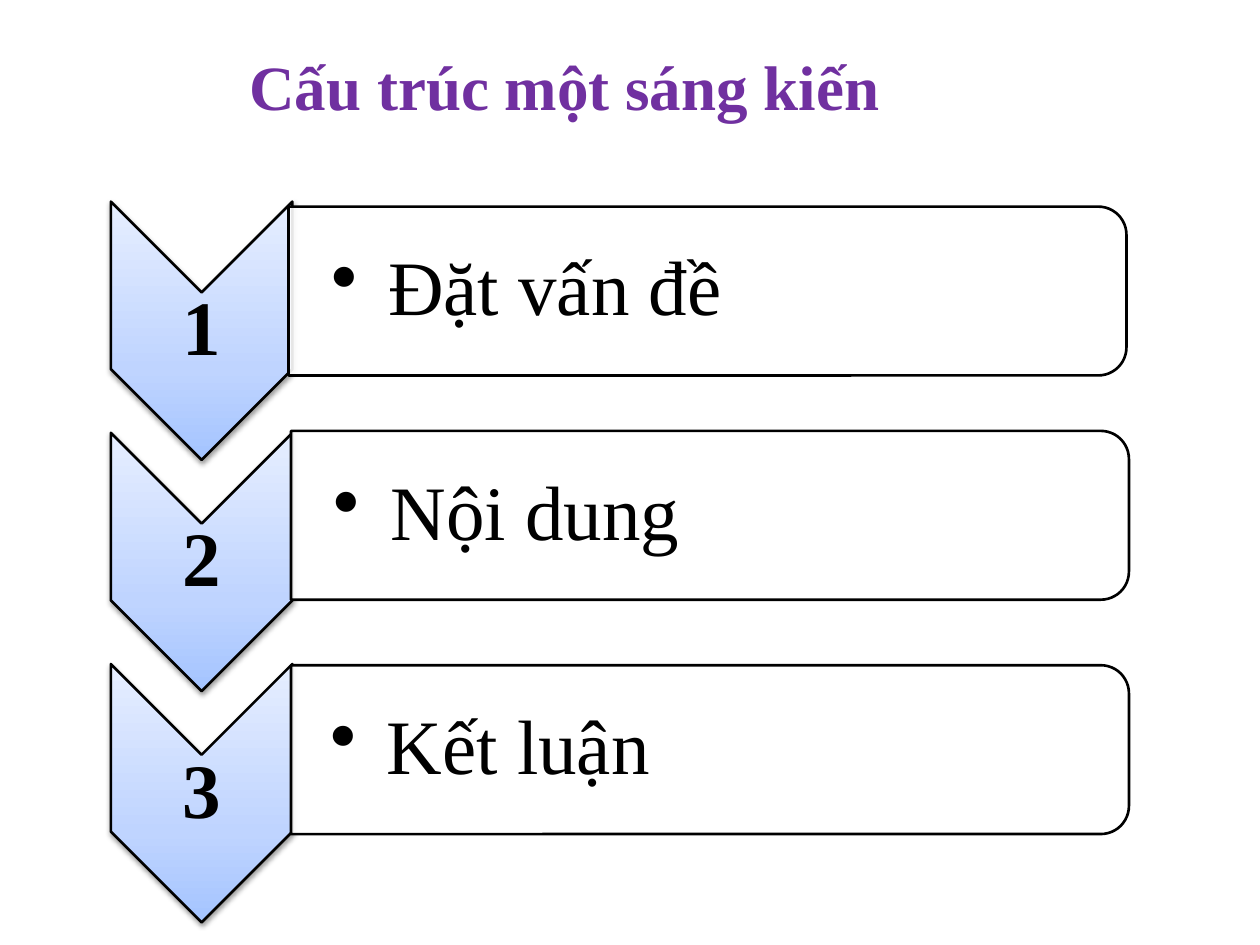
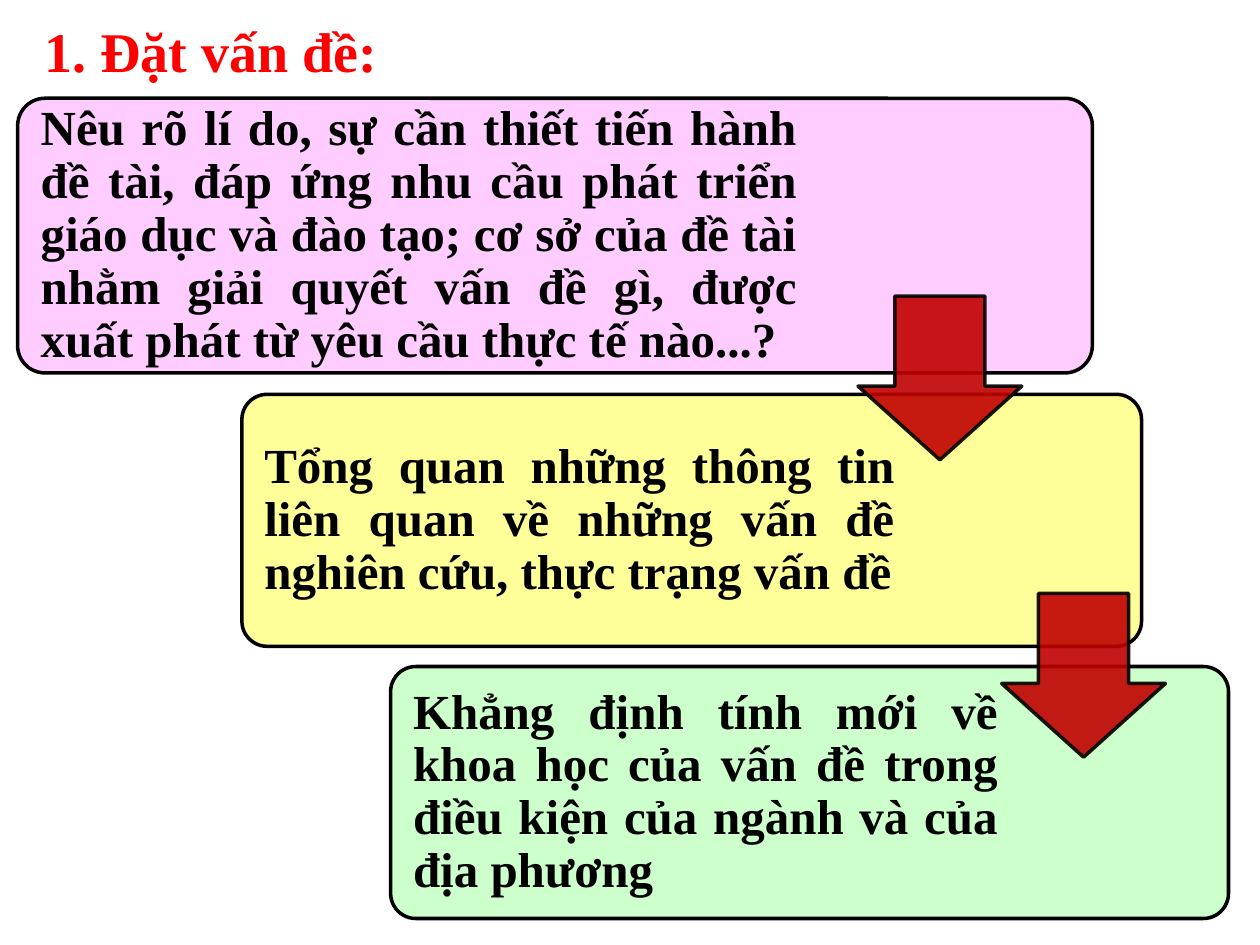
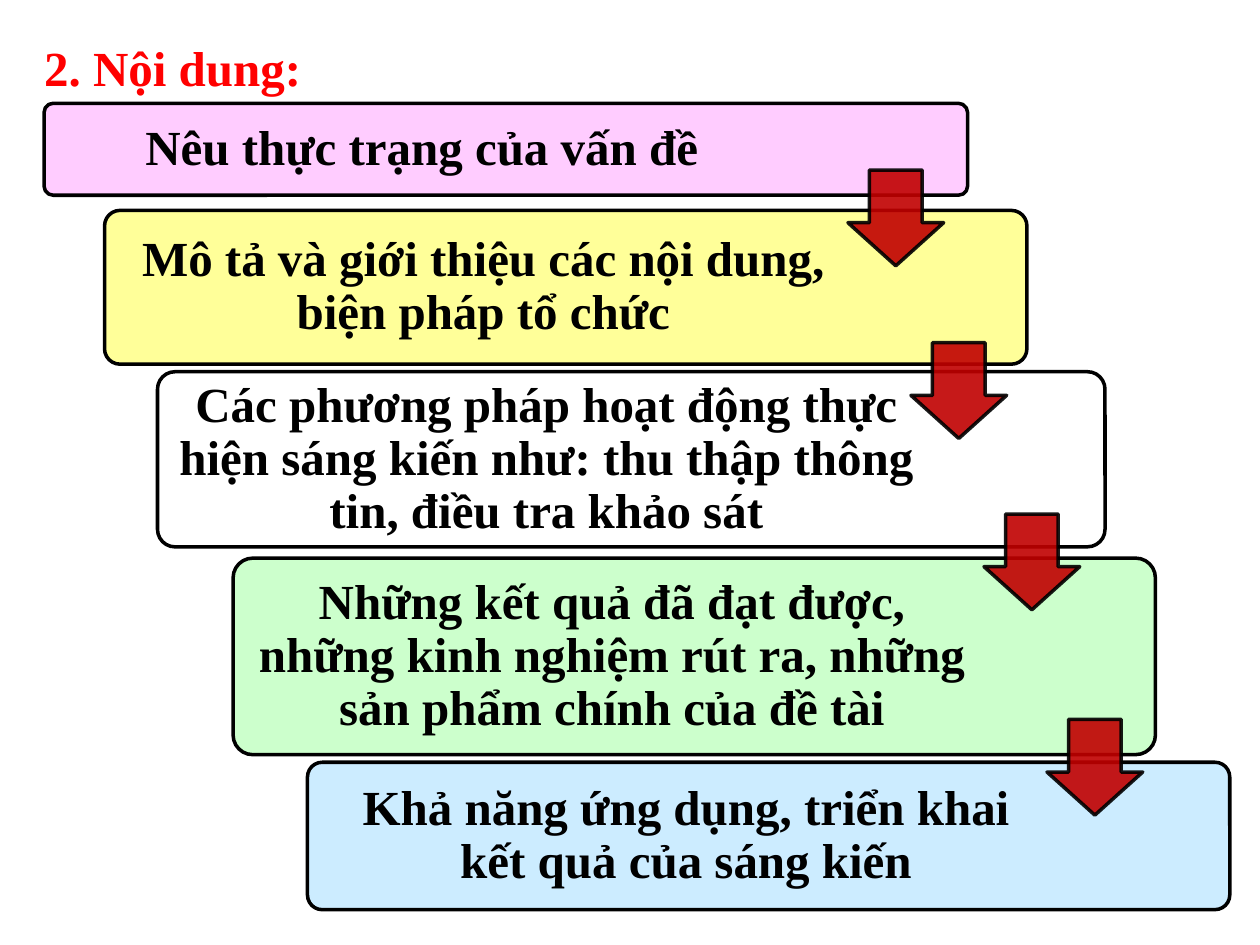
from pptx import Presentation
from pptx.dml.color import RGBColor
from pptx.enum.shapes import MSO_SHAPE
from pptx.enum.text import MSO_ANCHOR, PP_ALIGN
from pptx.oxml import parse_xml
from pptx.oxml.ns import nsdecls, qn
from pptx.oxml.xmlchemy import OxmlElement
from pptx.util import Inches, Pt

BLACK = RGBColor(0x00, 0x00, 0x00)
WHITE = RGBColor(0xFF, 0xFF, 0xFF)
PURPLE = RGBColor(0x70, 0x30, 0xA0)
RED = RGBColor(0xFF, 0x00, 0x00)
DARK_RED = RGBColor(0xC0, 0x00, 0x00)
PINK = RGBColor(0xFF, 0xCC, 0xFF)
YELLOW = RGBColor(0xFF, 0xFF, 0x99)
GREEN = RGBColor(0xCC, 0xFF, 0xCC)
SKY = RGBColor(0xCC, 0xEC, 0xFF)
CHEVRON_STOPS = [
    (0, RGBColor(0xA4, 0xC4, 0xFF)),
    (35, RGBColor(0xBF, 0xD4, 0xFF)),
    (100, RGBColor(0xE6, 0xEE, 0xFF)),
]
FONT = "Times New Roman"
ROUNDING = 0.1
CORNER_INSET = 0.29 * ROUNDING


def write(sp, text, size=28, color=BLACK, bold=True, align=PP_ALIGN.LEFT,
          anchor=MSO_ANCHOR.MIDDLE, spacing=0.9, margins=(0.12,) * 4):
    tf = sp.text_frame
    tf.word_wrap = True
    tf.vertical_anchor = anchor
    tf.margin_left, tf.margin_top, tf.margin_right, tf.margin_bottom = map(Inches, margins)
    p = tf.paragraphs[0]
    p.alignment = align
    p.line_spacing = spacing
    r = p.add_run()
    r.text = text
    r.font.name = FONT
    r.font.size = Pt(size)
    r.font.bold = bold
    r.font.color.rgb = color
    return p


def add_text(s, box, text, **fmt):
    return write(s.shapes.add_textbox(*map(Inches, box)), text, **fmt)


def add_title(s, box, text, indent=0.1, **fmt):
    sp = s.shapes.title
    sp.left, sp.top, sp.width, sp.height = map(Inches, box)
    write(sp, text, anchor=MSO_ANCHOR.TOP, spacing=1.0,
          margins=(indent, 0.05, 0.1, 0.05), **fmt)


def add_shape(s, kind, box, fill, line=2, alpha=100, line_alpha=100, adjust=(), turned=False):
    x, y, w, h = box
    if turned:
        x, y, w, h = x + (w - h) / 2, y + (h - w) / 2, h, w
    sp = s.shapes.add_shape(kind, *map(Inches, (x, y, w, h)))
    sp.rotation = 90 if turned else 0
    sp.shadow.inherit = False
    for i, value in enumerate(adjust):
        sp.adjustments[i] = value
    sp.fill.solid()
    sp.fill.fore_color.rgb = fill
    sp.line.color.rgb = BLACK
    sp.line.width = Pt(line)
    spPr = sp._element.spPr
    for part, opacity in ((spPr, alpha), (spPr.find(qn("a:ln")), line_alpha)):
        if opacity < 100:
            color = part.find(qn("a:solidFill")).find(qn("a:srgbClr"))
            color.append(parse_xml(f'<a:alpha {nsdecls("a")} val="{opacity * 1000}"/>'))
    return sp


def add_chevron(s, box, label):
    x, y, w, h = box
    sp = add_shape(s, MSO_SHAPE.CHEVRON, box, WHITE, line=1.5, turned=True)
    spPr = sp._element.spPr
    stops = "".join(f'<a:gs pos="{pos * 1000}"><a:srgbClr val="{rgb}"/></a:gs>'
                    for pos, rgb in CHEVRON_STOPS)
    spPr.replace(spPr.find(qn("a:solidFill")), parse_xml(
        f'<a:gradFill {nsdecls("a")} rotWithShape="0"><a:gsLst>{stops}</a:gsLst>'
        '<a:lin ang="16200000" scaled="1"/></a:gradFill>'))
    spPr.find(qn("a:effectLst")).append(parse_xml(
        f'<a:outerShdw {nsdecls("a")} blurRad="{Pt(3.1)}" dist="{Pt(1.6)}" dir="5400000" '
        'rotWithShape="0"><a:srgbClr val="000000"><a:alpha val="38000"/></a:srgbClr></a:outerShdw>'))
    add_text(s, (x, y + w / 2, w, h - 2 * (w / 2)), label, size=44,
             align=PP_ALIGN.CENTER, margins=(0.03,) * 4)


def add_bar(s, box, text, inset):
    x, y, w, h = box
    add_shape(s, MSO_SHAPE.ROUND_2_SAME_RECTANGLE, box, WHITE, line=1.5, alpha=90, turned=True)
    p = add_text(s, (x, y + 0.07, w - 0.07, h - 0.14), text, size=44, bold=False,
                 margins=(inset, 0.03, 0.03, 0.03))
    pPr = p._p.get_or_add_pPr()
    pPr.set("marL", str(Inches(0.45)))
    pPr.set("indent", str(-Inches(0.45)))
    bullet = OxmlElement("a:buChar")
    bullet.set("char", "•")
    pPr.append(bullet)


def add_card(s, box, text, text_width, fill, align):
    x, y, w, h = box
    inset = CORNER_INSET * h
    add_shape(s, MSO_SHAPE.ROUNDED_RECTANGLE, box, fill, adjust=(ROUNDING,))
    add_text(s, (x + inset, y + inset, text_width, h - 2 * inset), text, align=align)


def structure_slide(prs):
    s = prs.slides.add_slide(prs.slide_layouts[5])
    add_title(s, (0.88, 0.33, 8.08, 0.71), "Cấu trúc một sáng kiến",
              indent=1.1, size=36, color=PURPLE)
    rows = [
        ("Đặt vấn đề", 2.29, 1.64, 0.34),
        ("Nội dung", 2.31, 3.42, 0.34),
        ("Kết luận", 2.31, 5.28, 0.31),
    ]
    for i, (text, left, top, inset) in enumerate(rows):
        add_chevron(s, (0.88, 1.6 + 1.835 * i, 1.44, 2.05), str(i + 1))
        add_bar(s, (left, top, 6.65, 1.34), text, inset)


def staircase_slide(prs, title_box, title, title_size, cards, align, arrows, arrow_size):
    s = prs.slides.add_slide(prs.slide_layouts[5])
    add_title(s, title_box, title, size=title_size, color=RED)
    for box, text_width, fill, text in cards:
        add_card(s, box, text, text_width, fill, align)
    for x, y in arrows:
        add_shape(s, MSO_SHAPE.DOWN_ARROW, (x, y, arrow_size, arrow_size), DARK_RED,
                  alpha=90, line_alpha=90, adjust=(0.55, 0.45))


def main():
    prs = Presentation()
    prs.slide_width, prs.slide_height = Inches(10), Inches(7.5)
    structure_slide(prs)
    staircase_slide(
        prs, (0.25, 0.08, 8.92, 0.64), "1. Đặt vấn đề:", 32,
        [
            ((0.14, 0.78, 8.53, 2.18), 6.24, PINK,
             "Nêu rõ lí do, sự cần thiết tiến hành đề tài, đáp ứng nhu cầu phát triển "
             "giáo dục và đào tạo; cơ sở của đề tài nhằm giải quyết vấn đề gì, được "
             "xuất phát từ yêu cầu thực tế nào...?"),
            ((1.92, 3.13, 7.14, 2), 5.24, YELLOW,
             "Tổng quan những thông tin liên quan về những vấn đề nghiên cứu, "
             "thực trạng vấn đề"),
            ((3.1, 5.29, 6.65, 2), 4.88, GREEN,
             "Khẳng định tính mới về khoa học của vấn đề trong điều kiện của ngành "
             "và của địa phương"),
        ],
        PP_ALIGN.JUSTIFY, [(6.81, 2.35), (7.95, 4.71)], 1.3)
    staircase_slide(
        prs, (0.25, 0.25, 8.92, 0.57), "2. Nội dung:", 28,
        [
            ((0.35, 0.82, 7.33, 0.73), 5.95, PINK, "Nêu thực trạng của vấn đề"),
            ((0.83, 1.67, 7.32, 1.22), 5.94, YELLOW,
             "Mô tả và giới thiệu các nội dung, biện pháp tổ chức"),
            ((1.25, 2.95, 7.52, 1.39), 6.09, WHITE,
             "Các phương pháp hoạt động thực hiện sáng kiến như: thu thập thông tin, "
             "điều tra khảo sát"),
            ((1.85, 4.43, 7.32, 1.56), 5.92, GREEN,
             "Những kết quả đã đạt được, những kinh nghiệm rút ra, những sản phẩm "
             "chính của đề tài"),
            ((2.44, 6.05, 7.32, 1.17), 5.94, SKY,
             "Khả năng ứng dụng, triển khai kết quả của sáng kiến"),
        ],
        PP_ALIGN.CENTER, [(6.73, 1.35), (7.23, 2.72), (7.81, 4.08), (8.31, 5.71)], 0.76)
    prs.save("out.pptx")


if __name__ == "__main__":
    main()
